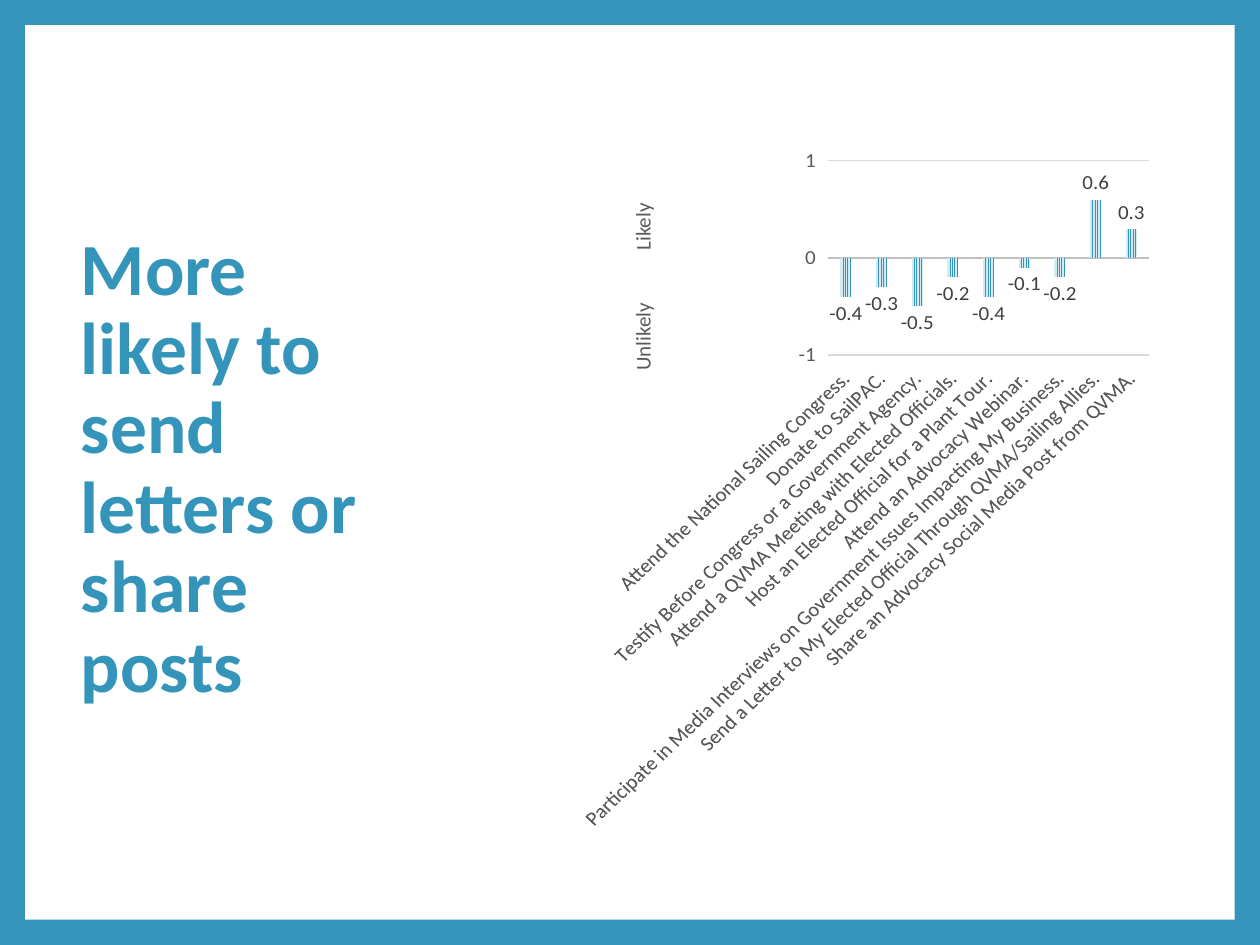
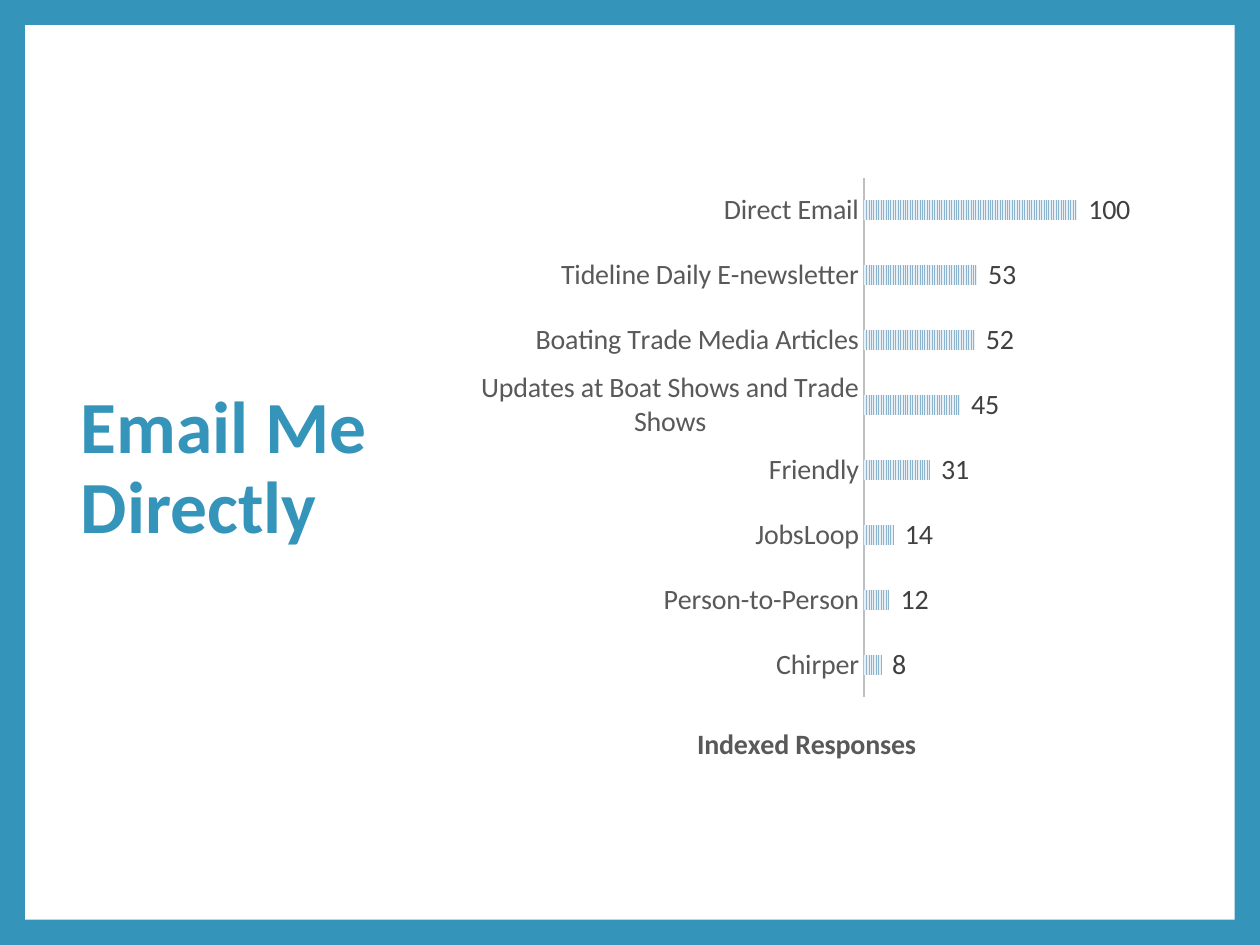
from lxml import etree
from pptx import Presentation
from pptx.chart.data import CategoryChartData
from pptx.dml.color import RGBColor
from pptx.enum.chart import XL_CHART_TYPE, XL_LABEL_POSITION, XL_TICK_LABEL_POSITION, XL_TICK_MARK
from pptx.enum.dml import MSO_PATTERN
from pptx.enum.shapes import MSO_SHAPE
from pptx.enum.text import MSO_ANCHOR, MSO_AUTO_SIZE, PP_ALIGN
from pptx.oxml.ns import qn
from pptx.util import Pt

COLUMN, BAR = XL_CHART_TYPE.COLUMN_CLUSTERED, XL_CHART_TYPE.BAR_CLUSTERED
OUTSIDE_END = XL_LABEL_POSITION.OUTSIDE_END
LABELS_LOW = XL_TICK_LABEL_POSITION.LOW
NO_TICK = XL_TICK_MARK.NONE
STRIPES = MSO_PATTERN.NARROW_VERTICAL
MIDDLE, CENTER, LEFT = MSO_ANCHOR.MIDDLE, PP_ALIGN.CENTER, PP_ALIGN.LEFT

FONT = "Calibri"
COLORS = {
    "blue": "3494BA", "pale_blue": "D4EAF3", "steel": "8CB4CD", "pale_steel": "E8F0F5",
    "white": "FFFFFF", "grey": "595959", "dark": "404040", "axis": "BFBFBF", "grid": "D9D9D9",
}
BORDER = 14.4
INDEX_FORMAT = '_(* #,##0_);_(* \\(#,##0\\);_(* "-"??_);_('

ACTIONS = {
    "Attend the National Sailing Congress.": -0.4,
    "Donate to SailPAC.": -0.3,
    "Testify Before Congress or a Government Agency.": -0.5,
    "Attend a QVMA Meeting with Elected Officials.": -0.2,
    "Host an Elected Official for a Plant Tour.": -0.4,
    "Attend an Advocacy Webinar.": -0.1,
    "Participate in Media Interviews on Government Issues Impacting My Business.": -0.2,
    "Send a Letter to My Elected Official Through QVMA/Sailing Allies.": 0.6,
    "Share an Advocacy Social Media Post from QVMA.": 0.3,
}
CHANNELS = {
    "Direct Email": 100,
    "Tideline Daily E-newsletter": 53,
    "Boating Trade Media Articles": 52,
    "Updates at Boat Shows and Trade Shows": 45,
    "Friendly": 31,
    "JobsLoop": 14,
    "Person-to-Person": 12,
    "Chirper": 8,
}


def rgb(name):
    """Return the palette colour of that name."""
    return RGBColor.from_string(COLORS[name])


def set_font(font, size, color, bold=False):
    """Format a font in the deck's typeface."""
    font.name, font.size, font.bold = FONT, Pt(size), bold
    font.color.rgb = rgb(color)


def write(tf, text, size=12, color="grey", bold=False, align=None, spacing=None):
    """Put one formatted paragraph into a text frame."""
    p = tf.paragraphs[0]
    p.alignment, p.line_spacing = align, spacing
    r = p.add_run()
    r.text = text
    set_font(r.font, size, color, bold)


def add_framed_slide(prs, title):
    """Add a slide with the white panel and the title at its left."""
    s = prs.slides.add_slide(prs.slide_layouts[5])
    panel = s.shapes.add_shape(MSO_SHAPE.RECTANGLE, Pt(BORDER), Pt(BORDER),
                               prs.slide_width - Pt(2 * BORDER),
                               prs.slide_height - Pt(2 * BORDER))
    panel.shadow.inherit = False
    panel.fill.solid()
    panel.fill.fore_color.rgb = rgb("white")
    panel.line.fill.background()
    sp = s.shapes.title
    sp.element.addprevious(panel.element)
    sp.left, sp.top, sp.width, sp.height = Pt(39), Pt(48), Pt(199), Pt(441)
    tf = sp.text_frame
    tf.word_wrap, tf.auto_size, tf.vertical_anchor = True, MSO_AUTO_SIZE.NONE, MIDDLE
    write(tf, title, size=42, color="blue", bold=True, align=LEFT, spacing=0.9)
    return s


def add_upright_label(s, text, center_x, center_y, width=60, height=18):
    """Add a label that reads from bottom to top."""
    sp = s.shapes.add_textbox(Pt(center_x - width / 2), Pt(center_y - height / 2),
                              Pt(width), Pt(height))
    sp.rotation = -90
    tf = sp.text_frame
    tf.word_wrap, tf.vertical_anchor = True, MIDDLE
    tf.margin_left = tf.margin_right = tf.margin_top = tf.margin_bottom = 0
    write(tf, text, align=CENTER)


def place(parent, **fractions):
    """Give a chart part a fixed place, as fractions of the chart."""
    layout = parent.find(qn("c:layout"))
    if layout is None:
        layout = etree.Element(qn("c:layout"))
        parent.insert(0, layout)
    manual = etree.SubElement(layout, qn("c:manualLayout"))
    if "w" in fractions:
        etree.SubElement(manual, qn("c:layoutTarget"), val="inner")
    for mode in ("xMode", "yMode"):
        etree.SubElement(manual, qn(f"c:{mode}"), val="edge")
    for name, value in fractions.items():
        etree.SubElement(manual, qn(f"c:{name}"), val=str(value))


def add_striped_chart(s, kind, box, data, plot_area, size, stripes, number_format):
    """Add a one-series chart with striped bars and value labels."""
    cd = CategoryChartData()
    cd.categories = list(data)
    cd.add_series("Series 1", list(data.values()))
    chart = s.shapes.add_chart(kind, *map(Pt, box), cd).chart
    chart.has_legend = chart.has_title = False
    set_font(chart.font, size, "grey")
    place(chart.element.find(".//" + qn("c:plotArea")), **plot_area)

    plot = chart.plots[0]
    plot.gap_width, plot.vary_by_categories = 227, False
    series = plot.series[0]
    series.invert_if_negative = False
    fill = series.format.fill
    fill.patterned()
    fill.pattern = STRIPES
    fill.fore_color.rgb, fill.back_color.rgb = map(rgb, stripes)

    plot.has_data_labels = True
    labels = plot.data_labels
    labels.show_value, labels.position = True, OUTSIDE_END
    labels.number_format, labels.number_format_is_linked = number_format, False
    set_font(labels.font, size, "dark")

    axis = chart.category_axis
    axis.major_tick_mark = NO_TICK
    axis.format.line.color.rgb, axis.format.line.width = rgb("axis"), Pt(1.5)
    set_font(axis.tick_labels.font, size, "grey")
    chart.value_axis.has_major_gridlines = False
    return chart


def add_likelihood_chart(s):
    """Add the column chart of likely and unlikely actions."""
    chart = add_striped_chart(
        s, COLUMN, (270, 79.2, 394.6, 395.3), ACTIONS,
        dict(x=0.515, y=0.034, w=0.465, h=0.296), 12, ("blue", "pale_blue"), "#,##0.0")
    chart.category_axis.tick_label_position = LABELS_LOW
    body = chart.element.find(".//" + "/".join(map(qn, ("c:catAx", "c:txPr", "a:bodyPr"))))
    body.set("rot", "-2700000")
    body.set("vert", "horz")
    axis = chart.value_axis
    axis.minimum_scale, axis.maximum_scale, axis.major_unit = -1, 1, 1
    axis.major_tick_mark = XL_TICK_MARK.OUTSIDE
    axis.format.line.fill.background()
    axis.has_major_gridlines = True
    grid = axis.major_gridlines.format.line
    grid.color.rgb, grid.width = rgb("grid"), Pt(0.75)
    set_font(axis.tick_labels.font, 12, "grey")
    axis.tick_labels.number_format, axis.tick_labels.number_format_is_linked = "0", False


def add_channel_chart(s):
    """Add the bar chart of indexed responses by channel."""
    chart = add_striped_chart(
        s, BAR, (268.6, 94.3, 380.9, 352.1), CHANNELS,
        dict(x=0.591, y=0.021, w=0.384, h=0.843), 16, ("steel", "pale_steel"), INDEX_FORMAT)
    chart.plots[0].overlap = -48
    chart.category_axis.reverse_order = True
    axis = chart.value_axis
    axis.minimum_scale, axis.maximum_scale, axis.visible = 0, 120, False
    chart.has_title = True
    write(chart.chart_title.text_frame, "Indexed Responses", size=16, bold=True)
    place(chart.element.find(".//" + qn("c:title")), x=0.333, y=0.9)


def main():
    """Build the two slides and save them."""
    prs = Presentation()
    prs.slide_width, prs.slide_height = Pt(720), Pt(540)
    fill = prs.slide_master.background.fill
    fill.solid()
    fill.fore_color.rgb = rgb("blue")

    s = add_framed_slide(prs, "More likely to send letters or share posts")
    add_likelihood_chart(s)
    for text, center_y in (("Likely", 129.7), ("Unlikely", 192.6)):
        add_upright_label(s, text, 367, center_y)

    s = add_framed_slide(prs, "Email Me Directly")
    add_channel_chart(s)
    prs.save("out.pptx")


if __name__ == "__main__":
    main()
